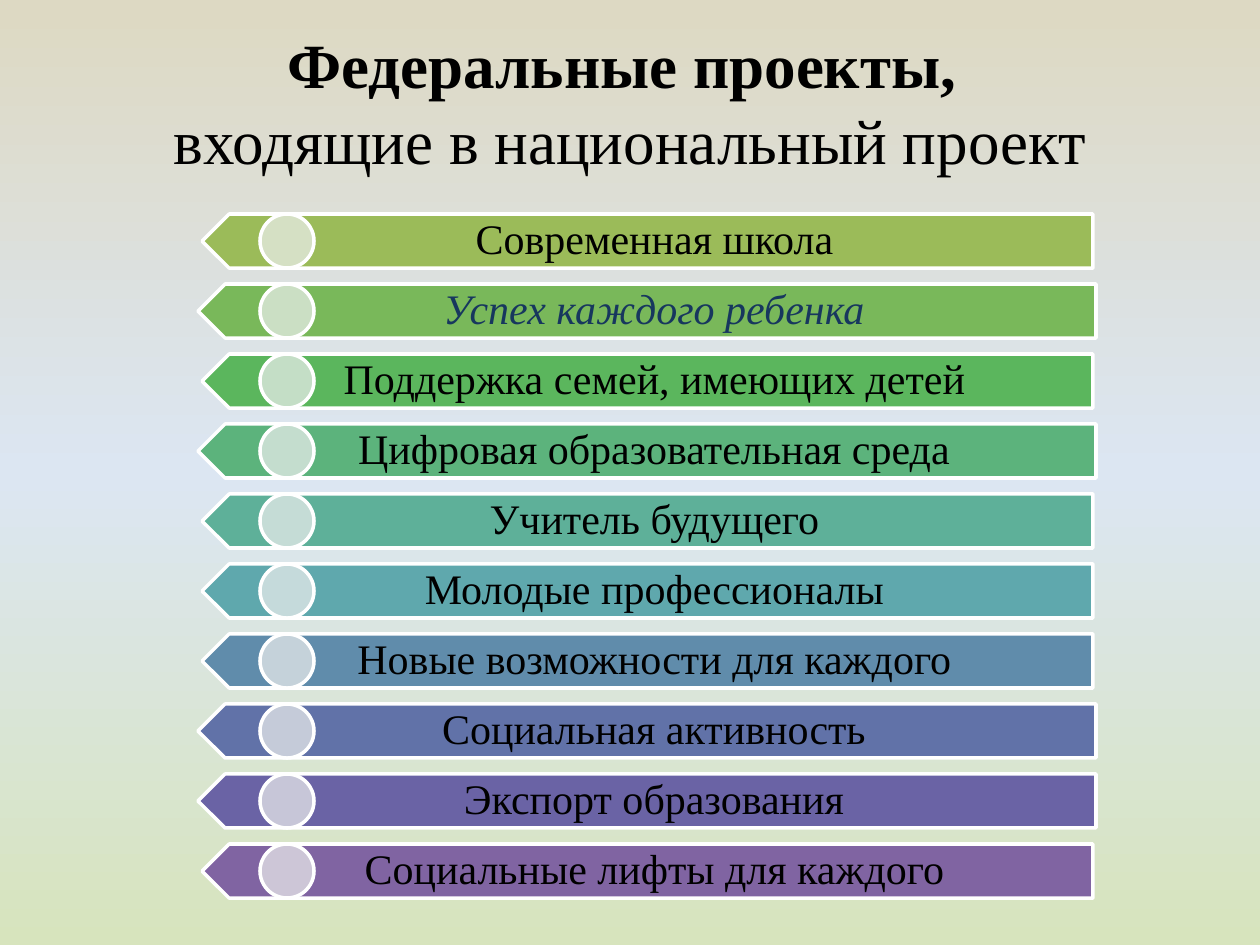
from copy import deepcopy
from dataclasses import dataclass

from pptx import Presentation
from pptx.dml.color import RGBColor
from pptx.enum.shapes import MSO_SHAPE
from pptx.enum.text import MSO_ANCHOR, MSO_AUTO_SIZE, PP_ALIGN
from pptx.oxml.ns import qn
from pptx.slide import Slide
from pptx.text.text import TextFrame, _Paragraph
from pptx.util import Emu, Pt

PENTAGON = MSO_SHAPE.PENTAGON
OVAL = MSO_SHAPE.OVAL
MIDDLE = MSO_ANCHOR.MIDDLE
CENTER = PP_ALIGN.CENTER
NO_AUTOFIT = MSO_AUTO_SIZE.NONE

PX_PER_INCH = 126
FONT = "Times New Roman"
COLORS = {
    "text": "000000",
    "accent_text": "17375E",
    "outline": "FFFFFF",
    "sand": "DDD9C3",
    "sky": "DCE6F2",
    "grass": "D7E4BD",
}
BACKGROUND_STOPS = [(0.01, "sand"), (0.5, "sky"), (1, "grass")]

FIRST_TOP = 214
ROW_PITCH = 70
ROW_HEIGHT = 54
BAR_CENTER = 1295
BAR_WIDTH = 891
WIDE_BAR_WIDTH = 898
TEXT_INDENT = 14
CIRCLE_LEFT = 260
INSET_X = 24
INSET_Y = 12


@dataclass
class Project:
    name: str
    bar_color: str
    circle_color: str
    wide: bool = False
    accented: bool = False


PROJECTS = [
    Project("Современная школа", "9BBB59", "D5E0C4"),
    Project("Успех каждого ребенка", "79B85A", "CBDFC4", wide=True, accented=True),
    Project("Поддержка семей, имеющих детей", "5BB65D", "C4DEC6"),
    Project("Цифровая образовательная среда", "5CB37C", "C4DDCE", wide=True),
    Project("Учитель будущего", "5EB099", "C5DCD6"),
    Project("Молодые профессионалы", "5FA8AD", "C5DADB"),
    Project("Новые возможности для каждого", "608CAB", "C5D2DA"),
    Project("Социальная активность", "6172A8", "C5CBD9", wide=True),
    Project("Экспорт образования", "6A63A5", "C7C6D8", wide=True),
    Project("Социальные лифты для каждого", "8064A2", "CDC6D7"),
]


def px(value: int) -> Emu:
    return Emu(round(value * 914400 / PX_PER_INCH))


def rgb(hex_color: str) -> RGBColor:
    return RGBColor.from_string(hex_color)


def add_run(paragraph: _Paragraph, text: str, size: int, color: str,
            bold: bool = False, italic: bool = False) -> None:
    run = paragraph.add_run()
    run.text = text
    run.font.name = FONT
    run.font.size = Pt(size)
    run.font.bold = bold
    run.font.italic = italic
    run.font.color.rgb = rgb(COLORS[color])


def center_text(frame: TextFrame) -> _Paragraph:
    frame.word_wrap = True
    frame.auto_size = NO_AUTOFIT
    frame.vertical_anchor = MIDDLE
    paragraph = frame.paragraphs[0]
    paragraph.alignment = CENTER
    return paragraph


def paint_background(slide: Slide) -> None:
    fill = slide.background.fill
    fill.gradient()
    fill.gradient_angle = 270
    stop_list = slide.element.find(".//" + qn("a:gsLst"))
    stop_list.insert(1, deepcopy(stop_list[0]))
    for stop, (position, color) in zip(fill.gradient_stops, BACKGROUND_STOPS):
        stop.position = position
        stop.color.rgb = rgb(COLORS[color])


def write_title(slide: Slide) -> None:
    title = slide.shapes.title
    title.left, title.top = px(63), px(38)
    title.width, title.height = px(1134), px(127)
    paragraph = center_text(title.text_frame)
    add_run(paragraph, "Федеральные проекты, ", 36, "text", bold=True)
    paragraph.add_line_break()
    add_run(paragraph, "входящие в национальный проект", 36, "text")


def add_outlined_shape(slide: Slide, kind: MSO_SHAPE, left: int, top: int,
                       width: int, color: str, rotation: int = 0) -> None:
    shape = slide.shapes.add_shape(kind, px(left), px(top), px(width), px(ROW_HEIGHT))
    shape.rotation = rotation
    shape.shadow.inherit = False
    shape.fill.solid()
    shape.fill.fore_color.rgb = rgb(color)
    shape.line.color.rgb = rgb(COLORS["outline"])
    shape.line.width = Pt(2)


def add_label(slide: Slide, project: Project, left: int, top: int, width: int) -> None:
    label = slide.shapes.add_textbox(px(left), px(top), px(width), px(ROW_HEIGHT))
    frame = label.text_frame
    frame.margin_left = frame.margin_right = px(INSET_X)
    frame.margin_top = frame.margin_bottom = px(INSET_Y)
    paragraph = center_text(frame)
    paragraph.line_spacing = 0.9
    color = "accent_text" if project.accented else "text"
    add_run(paragraph, project.name, 24, color, italic=project.accented)


def add_project(slide: Slide, project: Project, top: int) -> None:
    width = WIDE_BAR_WIDTH if project.wide else BAR_WIDTH
    left = (BAR_CENTER - width) // 2
    add_outlined_shape(slide, PENTAGON, left, top, width, project.bar_color, rotation=180)
    add_label(slide, project, left + TEXT_INDENT, top, width - TEXT_INDENT)
    add_outlined_shape(slide, OVAL, CIRCLE_LEFT, top, ROW_HEIGHT, project.circle_color)


def main() -> None:
    presentation = Presentation()
    presentation.slide_width = px(1260)
    presentation.slide_height = px(945)
    slide = presentation.slides.add_slide(presentation.slide_layouts[5])
    paint_background(slide)
    write_title(slide)
    for index, project in enumerate(PROJECTS):
        add_project(slide, project, FIRST_TOP + index * ROW_PITCH)
    presentation.save("out.pptx")


if __name__ == "__main__":
    main()
